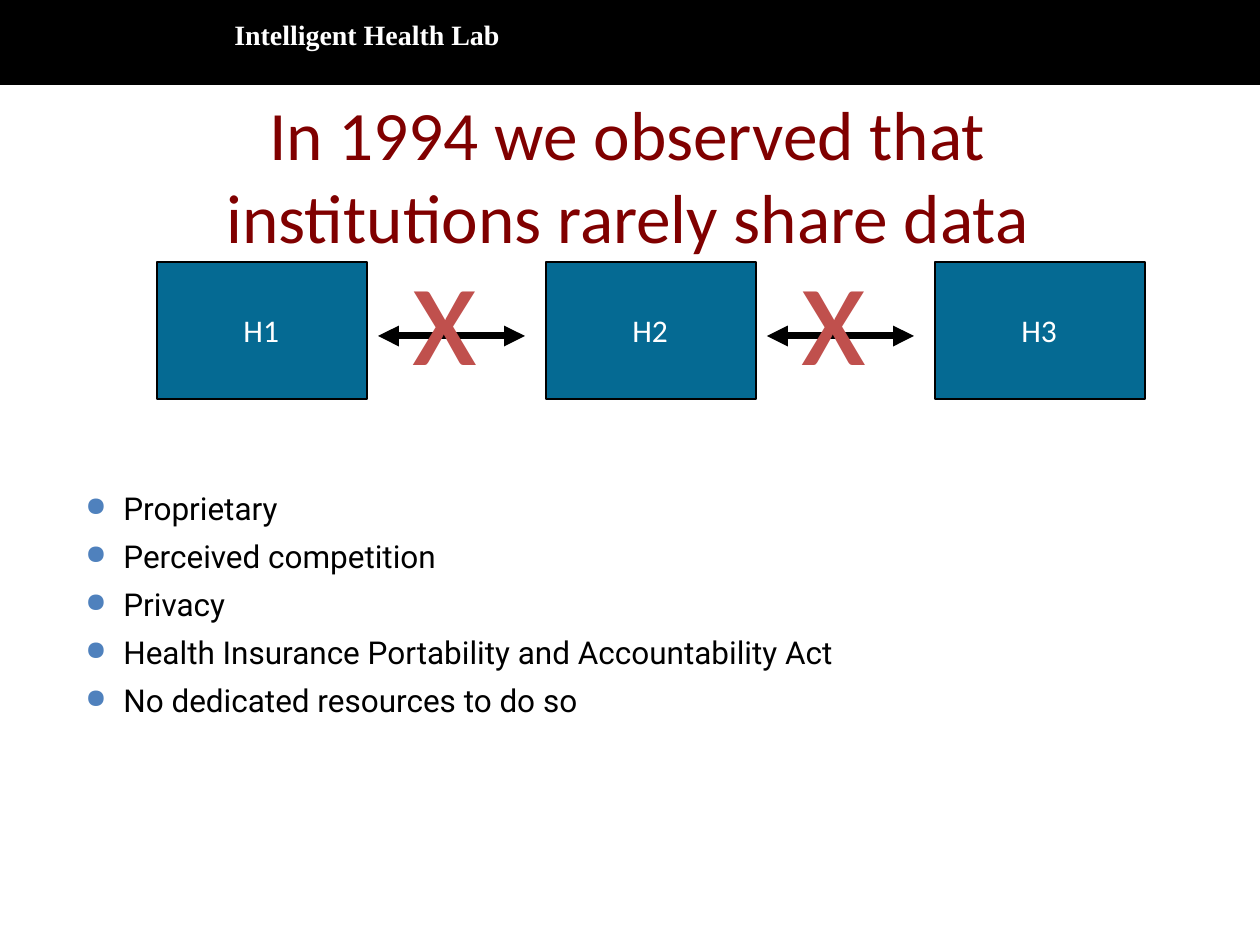
import pptx
import pptx.util
import pptx.dml.color
import pptx.enum.shapes
import pptx.enum.text
import lxml.etree
import pptx.oxml.ns

PX = 914400 / 126
qn = pptx.oxml.ns.qn
RECTANGLE = pptx.enum.shapes.MSO_SHAPE.RECTANGLE


def color(hex_code):
    return pptx.dml.color.RGBColor.from_string(hex_code)


def add_text(shapes, bounds, text, font, size, hex_code, wrap=True):
    """Add a text box with one run; return its frame, paragraph and run."""
    box = shapes.add_textbox(*[round(v * PX) for v in bounds])
    frame = box.text_frame
    frame.word_wrap = wrap
    para = frame.paragraphs[0]
    span = para.add_run()
    span.text = text
    span.font.name = font
    span.font.size = pptx.util.Pt(size)
    span.font.color.rgb = color(hex_code)
    return frame, para, span


deck = pptx.Presentation()
deck.slide_width = round(1260 * PX)
deck.slide_height = round(945 * PX)
page = deck.slides.add_slide(deck.slide_layouts[6])

# Header band and title
band = page.shapes.add_shape(RECTANGLE, 0, 0, deck.slide_width, round(84 * PX))
band.shadow.inherit = False
band.fill.solid()
band.fill.fore_color.rgb = color("000000")
band.line.color.rgb = color("000000")
band.line.width = pptx.util.Pt(0.75)

frame, para, span = add_text(page.shapes, (222, 11, 494, 47), "Intelligent Health Lab",
                             "Times New Roman", 16, "FFFFFF")
span.font.bold = True

frame, para, span = add_text(page.shapes, (94, 116, 1067, 116),
                             "In 1994 we observed that institutions rarely share data",
                             "Calibri", 39.6, "800000")
frame.vertical_anchor = pptx.enum.text.MSO_ANCHOR.MIDDLE
para.alignment = pptx.enum.text.PP_ALIGN.CENTER

# Three hospitals at equal steps
LEFT, STEP = 157, 389
for i, name in enumerate(["H1", "H2", "H3"]):
    left = LEFT + i * STEP
    group = page.shapes.add_group_shape()
    hospital = group.shapes.add_shape(
        RECTANGLE, *[round(v * PX) for v in (left, 262, 210, 137)])
    hospital.shadow.inherit = False
    hospital.fill.solid()
    hospital.fill.fore_color.rgb = color("056A93")
    hospital.line.color.rgb = color("000000")
    hospital.line.width = pptx.util.Pt(0.75)
    add_text(group.shapes, (left + 74, 305, 95, 50), name, "Calibri", 18, "FFFFFF")

# Two-way arrows between hospitals
for i in range(2):
    start = LEFT + 221 + i * STEP
    arrow = page.shapes.add_connector(
        pptx.enum.shapes.MSO_CONNECTOR.STRAIGHT,
        *[round(v * PX) for v in (start, 336, start + 147, 336)])
    arrow.line.color.rgb = color("000000")
    arrow.line.width = pptx.util.Pt(4)
    line = arrow.line._get_or_add_ln()
    for end in ("a:headEnd", "a:tailEnd"):
        lxml.etree.SubElement(line, qn(end), type="triangle")
    lxml.etree.SubElement(arrow._element.spPr, qn("a:effectLst"))

# Crosses over the arrows
for i in range(2):
    add_text(page.shapes, (LEFT + 242 + i * STEP, 205, 102, 198), "x",
             "Calibri", 88, "C0504D", wrap=False)

# Reasons
reasons = [
    "Proprietary",
    "Perceived competition",
    "Privacy",
    "Health Insurance Portability and Accountability Act",
    "No dedicated resources to do so",
]
box = page.shapes.add_textbox(*[round(v * PX) for v in (73, 483, 1144, 370)])
frame = box.text_frame
frame.word_wrap = True
for i, reason in enumerate(reasons):
    para = frame.add_paragraph() if i else frame.paragraphs[0]
    para.space_before = pptx.util.Pt(5.8 if i else 0)
    properties = para._p.get_or_add_pPr()
    properties.set("marL", str(round(38 * PX)))
    properties.set("indent", str(round(-38 * PX)))
    bullet_color = lxml.etree.SubElement(properties, qn("a:buClr"))
    lxml.etree.SubElement(bullet_color, qn("a:srgbClr"), val="4F81BD")
    lxml.etree.SubElement(properties, qn("a:buSzPct"), val="85000")
    lxml.etree.SubElement(properties, qn("a:buChar"), char="●")
    span = para.add_run()
    span.text = reason
    span.font.name = "Roboto"
    span.font.size = pptx.util.Pt(18)
    span.font.color.rgb = color("000000")

deck.save("out.pptx")
